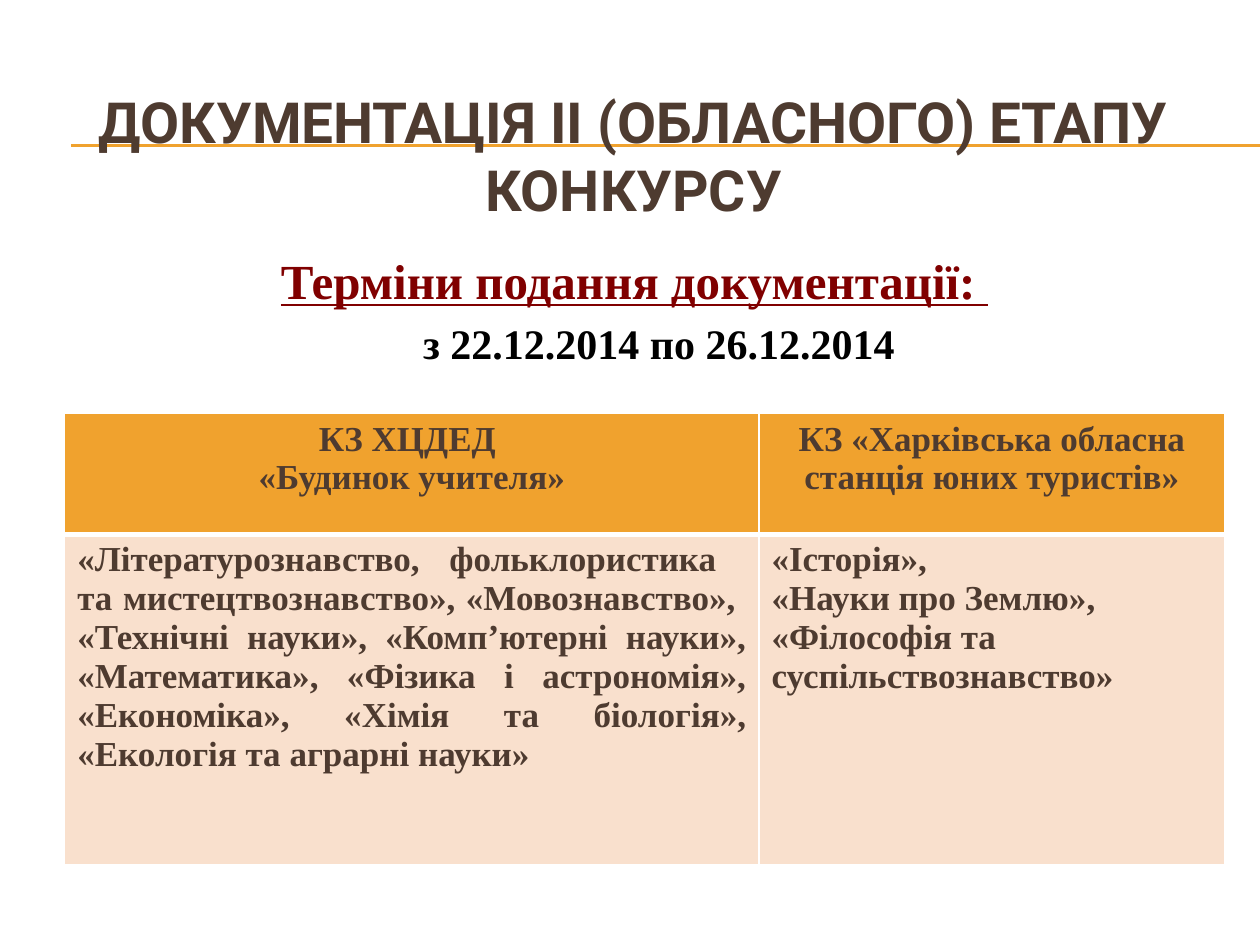
from lxml.etree import SubElement
from pptx import Presentation
from pptx.dml.color import RGBColor
from pptx.enum.shapes import MSO_CONNECTOR
from pptx.enum.text import MSO_ANCHOR, MSO_AUTO_SIZE, PP_ALIGN
from pptx.oxml.ns import qn
from pptx.util import Pt


def color(hex_string):
    return RGBColor.from_string(hex_string)


class SlideBuilder:
    accent, brown, pale, white = "F0A22E", "4E3B30", "F9E0CD", "FFFFFF"
    title_font, body_font = "Roboto", "Times New Roman"

    def __init__(self, slide):
        self.slide = slide

    def place(self, shape, left, top, width, height):
        shape.left, shape.top = Pt(left), Pt(top)
        shape.width, shape.height = Pt(width), Pt(height)
        shape.text_frame.auto_size = MSO_AUTO_SIZE.NONE

    def format_runs(self, paragraph, font, size, hex_string, underline=False):
        for run in paragraph.runs:
            run.font.name = font
            run.font.size = Pt(size)
            run.font.bold = True
            run.font.underline = underline
            run.font.color.rgb = color(hex_string)

    def rule(self, left, top, right):
        connector = self.slide.shapes.add_connector(
            MSO_CONNECTOR.STRAIGHT, Pt(left), Pt(top), Pt(right), Pt(top))
        connector.line.color.rgb = color(self.accent)
        connector.line.width = Pt(0.75)
        SubElement(connector._element.spPr, qn("a:effectLst"))

    def title(self, text, box):
        shape = self.slide.shapes.title
        self.place(shape, *box)
        shape.text_frame.text = text
        shape.text_frame.vertical_anchor = MSO_ANCHOR.MIDDLE
        paragraph = shape.text_frame.paragraphs[0]
        paragraph.alignment = PP_ALIGN.CENTER
        self.format_runs(paragraph, self.title_font, 32.4, self.brown)

    def body(self, lines, box):
        shape = self.slide.placeholders[1]
        self.place(shape, *box)
        shape.text_frame.text = "\n".join(line[0] for line in lines)
        for paragraph, line in zip(shape.text_frame.paragraphs, lines):
            text, size, hex_string, underline, margin, spacing = line
            paragraph.alignment = PP_ALIGN.CENTER
            paragraph.space_before = Pt(8)
            paragraph.line_spacing = spacing
            properties = paragraph._p.get_or_add_pPr()
            properties.set("marL", str(Pt(margin)))
            properties.set("indent", str(Pt(-27)))
            SubElement(properties, qn("a:buNone"))
            self.format_runs(paragraph, self.body_font, size, hex_string, underline)

    def borders(self, cell, bottom_width):
        properties = cell._tc.get_or_add_tcPr()
        for side, width in (("L", 1), ("R", 1), ("T", 1), ("B", bottom_width)):
            line = SubElement(properties, qn(f"a:ln{side}"), w=str(Pt(width)))
            fill = SubElement(line, qn("a:solidFill"))
            SubElement(fill, qn("a:srgbClr"), val=self.white)

    def table(self, rows, alignments, box, widths, heights):
        table = self.slide.shapes.add_table(
            len(rows), len(widths), *(Pt(value) for value in box)).table
        for column, width in zip(table.columns, widths):
            column.width = Pt(width)
        for row_index, texts in enumerate(rows):
            table.rows[row_index].height = Pt(heights[row_index])
            header = row_index == 0
            for column_index, text in enumerate(texts):
                cell = table.cell(row_index, column_index)
                self.borders(cell, 3 if header else 1)
                cell.fill.solid()
                cell.fill.fore_color.rgb = color(self.accent if header else self.pale)
                cell.text_frame.text = text
                for paragraph in cell.text_frame.paragraphs:
                    paragraph.alignment = alignments[row_index][column_index]
                    self.format_runs(paragraph, self.body_font, 20, self.brown)


def main():
    presentation = Presentation()
    presentation.slide_width, presentation.slide_height = Pt(720), Pt(540)
    slide = presentation.slides.add_slide(presentation.slide_layouts[1])
    builder = SlideBuilder(slide)

    # Double rule, moved behind the title
    for top in (82.8, 83.5):
        builder.rule(40.5, top, 720)
    shape_tree = slide.shapes._spTree
    for placeholder in list(slide.placeholders):
        shape_tree.append(placeholder._element)

    # Title and submission dates
    builder.title("ДОКУМЕНТАЦІЯ ІІ (ОБЛАСНОГО) ЕТАПУ КОНКУРСУ", (20, 54.7, 684, 67.7))
    builder.body([
        ("Терміни подання документації: ", 28, "800000", True, 27, 1.0),
        ("з 22.12.2014 по 26.12.2014", 24, "000000", False, 55, 0.9),
    ], (25.2, 139.7, 674.6, 380))

    # Sections by receiving institution
    builder.table(
        [
            ("КЗ ХЦДЕД \n«Будинок учителя»",
             "КЗ «Харківська обласна станція юних туристів»"),
            ("«Літературознавство, фольклористика  та мистецтвознавство», "
             "«Мовознавство»,  «Технічні науки», «Комп’ютерні науки», "
             "«Математика», «Фізика і астрономія», «Економіка», "
             "«Хімія та біологія», «Екологія та аграрні науки»",
             "«Історія»,\n«Науки про Землю»,\n«Філософія та суспільствознавство»"),
        ],
        [(PP_ALIGN.CENTER, PP_ALIGN.CENTER), (PP_ALIGN.JUSTIFY, PP_ALIGN.LEFT)],
        (37, 236.3, 663, 257.6), (396.7, 266.3), (69, 188.6))

    presentation.save("out.pptx")


if __name__ == "__main__":
    main()
